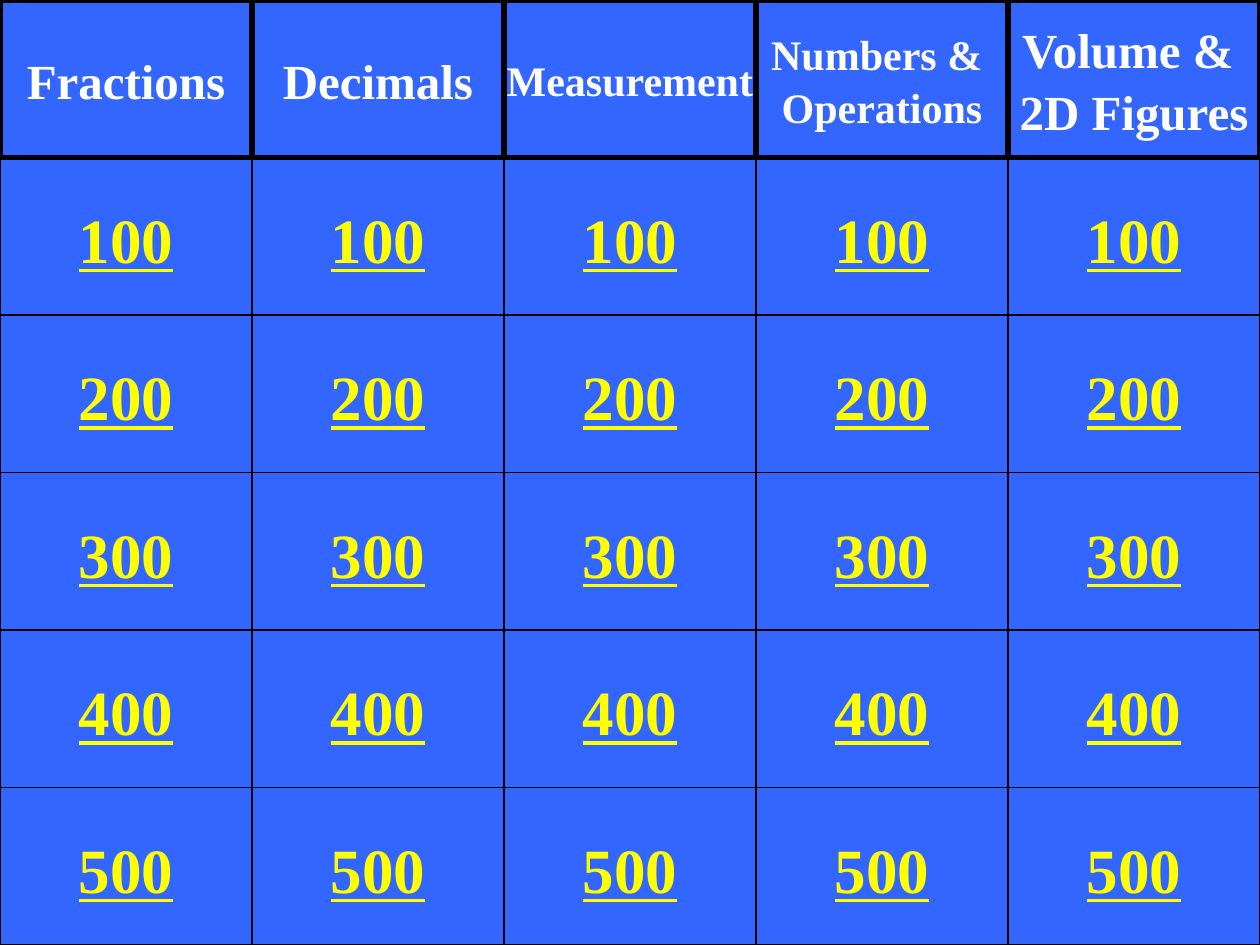
"""Build a quiz board: five categories with five point buttons each."""
from dataclasses import dataclass

from pptx import Presentation
from pptx.dml.color import RGBColor
from pptx.enum.shapes import MSO_SHAPE
from pptx.enum.text import MSO_ANCHOR, PP_ALIGN
from pptx.slide import Slide
from pptx.util import Cm, Pt

COLORS = {"board": "3366FF", "border": "000000", "heading": "FFFFFF", "points": "FFFF00"}
FONT = "Times New Roman"
SLIDE_W, SLIDE_H = Cm(25.4), Cm(19.05)


@dataclass(frozen=True)
class CellStyle:
    shape: MSO_SHAPE
    color: str
    border: float
    underline: bool


@dataclass(frozen=True)
class Category:
    lines: tuple[str, ...]
    size: int


HEADING = CellStyle(MSO_SHAPE.RECTANGLE, "heading", 3, False)
BUTTON = CellStyle(MSO_SHAPE.ACTION_BUTTON_CUSTOM, "points", 0.75, True)
CATEGORIES = (
    Category(("Fractions",), 28),
    Category(("Decimals",), 28),
    Category(("Measurement",), 24),
    Category(("Numbers & ", "Operations"), 24),
    Category(("Volume & ", "2D Figures"), 28),
)
POINTS = (100, 200, 300, 400, 500)
COL_W = SLIDE_W // len(CATEGORIES)
ROW_H = SLIDE_H // (len(POINTS) + 1)


def rgb(name: str) -> RGBColor:
    return RGBColor.from_string(COLORS[name])


def add_cell(s: Slide, col: int, row: int, lines: tuple[str, ...], size: int, style: CellStyle) -> None:
    sp = s.shapes.add_shape(style.shape, col * COL_W, row * ROW_H, COL_W, ROW_H)
    sp.shadow.inherit = False
    sp.fill.solid()
    sp.fill.fore_color.rgb = rgb("board")
    sp.line.color.rgb = rgb("border")
    sp.line.width = Pt(style.border)
    tf = sp.text_frame
    tf.word_wrap = False
    tf.vertical_anchor = MSO_ANCHOR.MIDDLE
    for i, line in enumerate(lines):
        p = tf.add_paragraph() if i else tf.paragraphs[0]
        p.alignment = PP_ALIGN.CENTER
        p.line_spacing = 1.05
        r = p.add_run()
        r.text = line
        r.font.name = FONT
        r.font.size = Pt(size)
        r.font.bold = True
        r.font.underline = style.underline
        r.font.color.rgb = rgb(style.color)


def main() -> None:
    prs = Presentation()
    prs.slide_width, prs.slide_height = SLIDE_W, SLIDE_H
    s = prs.slides.add_slide(prs.slide_layouts[6])
    s.background.fill.solid()
    s.background.fill.fore_color.rgb = rgb("board")
    for col in range(len(CATEGORIES)):
        for row, points in enumerate(POINTS, start=1):
            add_cell(s, col, row, (str(points),), 36, BUTTON)
    for col, category in enumerate(CATEGORIES):
        add_cell(s, col, 0, category.lines, category.size, HEADING)
    prs.save("out.pptx")


if __name__ == "__main__":
    main()
